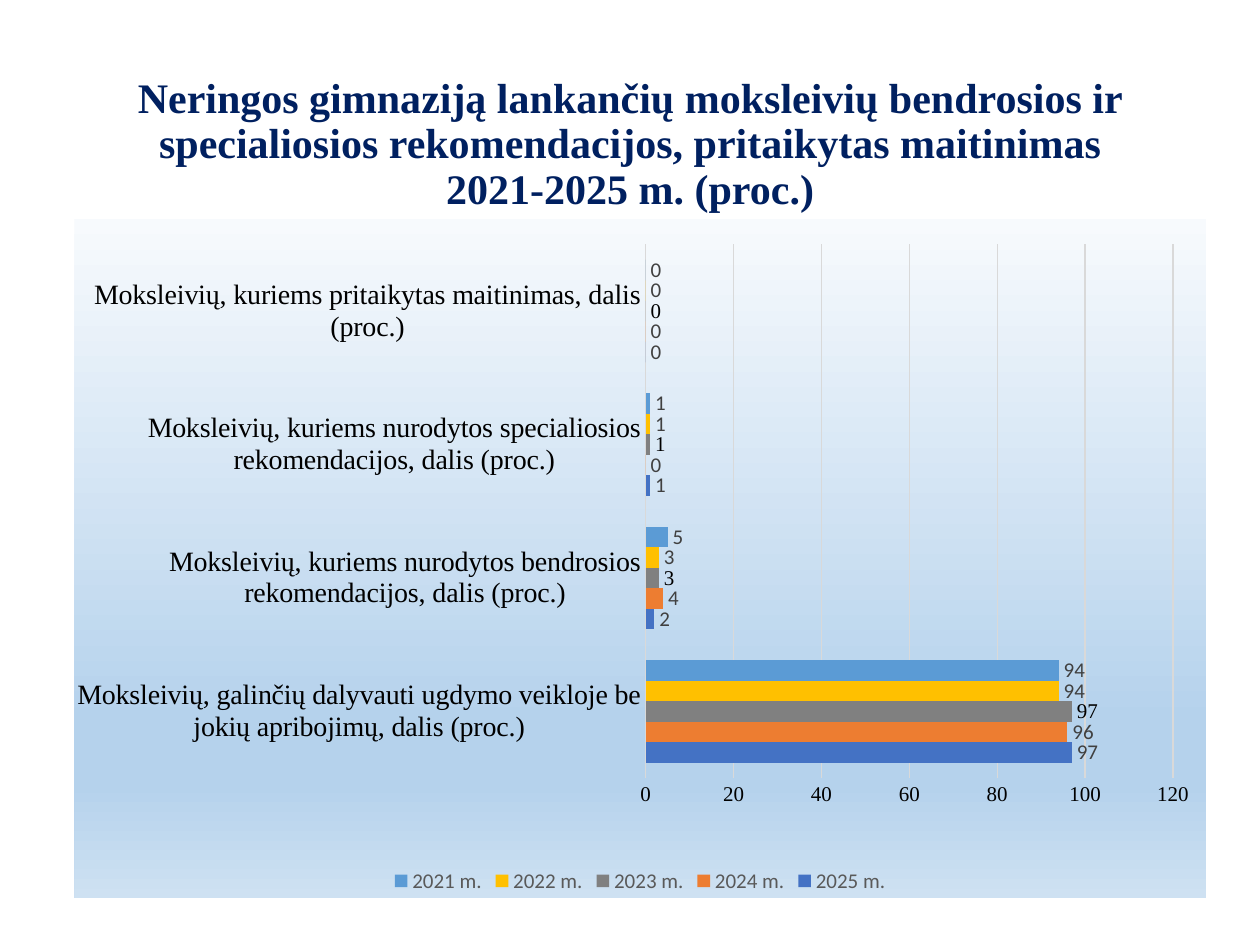
"""Build a slide with a titled bar chart of school health recommendations."""
from pptx import Presentation
from pptx.chart.data import CategoryChartData
from pptx.dml.color import RGBColor
from pptx.enum.chart import XL_CHART_TYPE, XL_LABEL_POSITION, XL_LEGEND_POSITION, XL_TICK_MARK
from pptx.enum.text import MSO_ANCHOR, PP_ALIGN
from pptx.oxml import parse_xml
from pptx.oxml.ns import nsdecls, qn
from pptx.util import Pt

BAR = XL_CHART_TYPE.BAR_CLUSTERED
END = XL_LABEL_POSITION.OUTSIDE_END
FOOT = XL_LEGEND_POSITION.BOTTOM
NONE = XL_TICK_MARK.NONE
LOW = MSO_ANCHOR.BOTTOM
MID = PP_ALIGN.CENTER

THEME = {
    "serif": "Times New Roman", "sans": "Calibri",
    "title": "002060", "ink": "000000", "label": "404040",
    "legend": "595959", "grid": "D9D9D9",
    "years": ["4472C4", "ED7D31", "808080", "FFC000", "5B9BD5"],
    "back": [(0, "F7FAFD"), (74, "B5D2EC"), (83, "B5D2EC"), (100, "CEE1F2")],
    "big": 24, "group": 16, "text": 12, "base": 10,
}


def style(font, size, color, face, bold=False):
    font.size = Pt(THEME[size])
    font.color.rgb = RGBColor.from_string(THEME[color])
    font.name = THEME[face]
    font.bold = bold


def write(slide, text, *, box, size, color, face, bold=False, align=MID, lead=0.9):
    frame = slide.shapes.add_textbox(*map(Pt, box)).text_frame
    frame.word_wrap = True
    frame.vertical_anchor = LOW
    par = frame.paragraphs[0]
    par.text = text
    par.alignment = align
    par.line_spacing = lead
    for run in par.runs:
        style(run.font, size, color, face, bold)


deck = Presentation()
deck.slide_width, deck.slide_height = Pt(720), Pt(540)
slide = deck.slides.add_slide(deck.slide_layouts[6])

write(
    slide,
    "Neringos gimnaziją lankančių moksleivių bendrosios ir specialiosios "
    "rekomendacijos, pritaikytas maitinimas\v2021-2025 m. (proc.)",
    box=(22.3, 47.5, 675.4, 77.8), size="big", color="title", face="serif", bold=True,
)

data = CategoryChartData()
data.categories = [
    "Moksleivių, galinčių dalyvauti ugdymo veikloje be jokių apribojimų, dalis (proc.)",
    "Moksleivių, kuriems nurodytos bendrosios rekomendacijos, dalis (proc.)",
    "Moksleivių, kuriems nurodytos specialiosios rekomendacijos, dalis (proc.)",
    "Moksleivių, kuriems pritaikytas maitinimas, dalis (proc.)",
]
data.add_series("2025 m.", [97, 2, 1, 0])
data.add_series("2024 m.", [96, 4, 0, 0])
data.add_series("2023 m.", [97, 3, 1, 0])
data.add_series("2022 m.", [94, 3, 1, 0])
data.add_series("2021 m.", [94, 5, 1, 0])

place = map(Pt, (42.5, 125.3, 646.6, 388.1))
chart = slide.shapes.add_chart(BAR, *place, data).chart
style(chart.font, "base", "ink", "sans")
chart.has_title = False
chart.has_legend = True
chart.legend.position = FOOT
chart.legend.include_in_layout = False
style(chart.legend.font, "text", "legend", "sans")

plot = chart.plots[0]
plot.gap_width = 150
plot.overlap = 0
plot.vary_by_categories = False
for row, color in zip(plot.series, THEME["years"]):
    row.format.fill.solid()
    row.format.fill.fore_color.rgb = RGBColor.from_string(color)
    row.invert_if_negative = False
    tags = row.data_labels
    tags.show_value = True
    tags.position = END
    if row.name == "2023 m.":
        style(tags.font, "text", "ink", "serif")
    else:
        style(tags.font, "text", "label", "sans")

for axis, size in ((chart.category_axis, "group"), (chart.value_axis, "text")):
    axis.major_tick_mark = axis.minor_tick_mark = NONE
    axis.format.line.fill.background()
    style(axis.tick_labels.font, size, "ink", "serif")
scale = chart.value_axis
scale.minimum_scale, scale.maximum_scale, scale.major_unit = 0, 120, 20
grid = scale.major_gridlines.format.line
grid.width = Pt(0.75)
grid.color.rgb = RGBColor.from_string(THEME["grid"])

root = chart._chartSpace
area = root.find(qn("c:chart")).find(qn("c:plotArea"))
for old in area.findall(qn("c:layout")):
    area.remove(old)
spots = zip("xywh", (0.505, 0.037, 0.466, 0.786))
sizes = "".join(f'<c:{key} val="{val}"/>' for key, val in spots)
area.insert(0, parse_xml(
    f'<c:layout {nsdecls("c")}><c:manualLayout><c:layoutTarget val="inner"/>'
    f'<c:xMode val="edge"/><c:yMode val="edge"/>{sizes}</c:manualLayout></c:layout>'
))
stops = "".join(
    f'<a:gs pos="{pos * 1000}"><a:srgbClr val="{color}"/></a:gs>'
    for pos, color in THEME["back"]
)
root.find(qn("c:chart")).addnext(parse_xml(
    f'<c:spPr {nsdecls("c", "a")}><a:gradFill><a:gsLst>{stops}</a:gsLst>'
    '<a:lin ang="5400000" scaled="0"/></a:gradFill><a:ln><a:noFill/></a:ln></c:spPr>'
))

deck.save("out.pptx")
